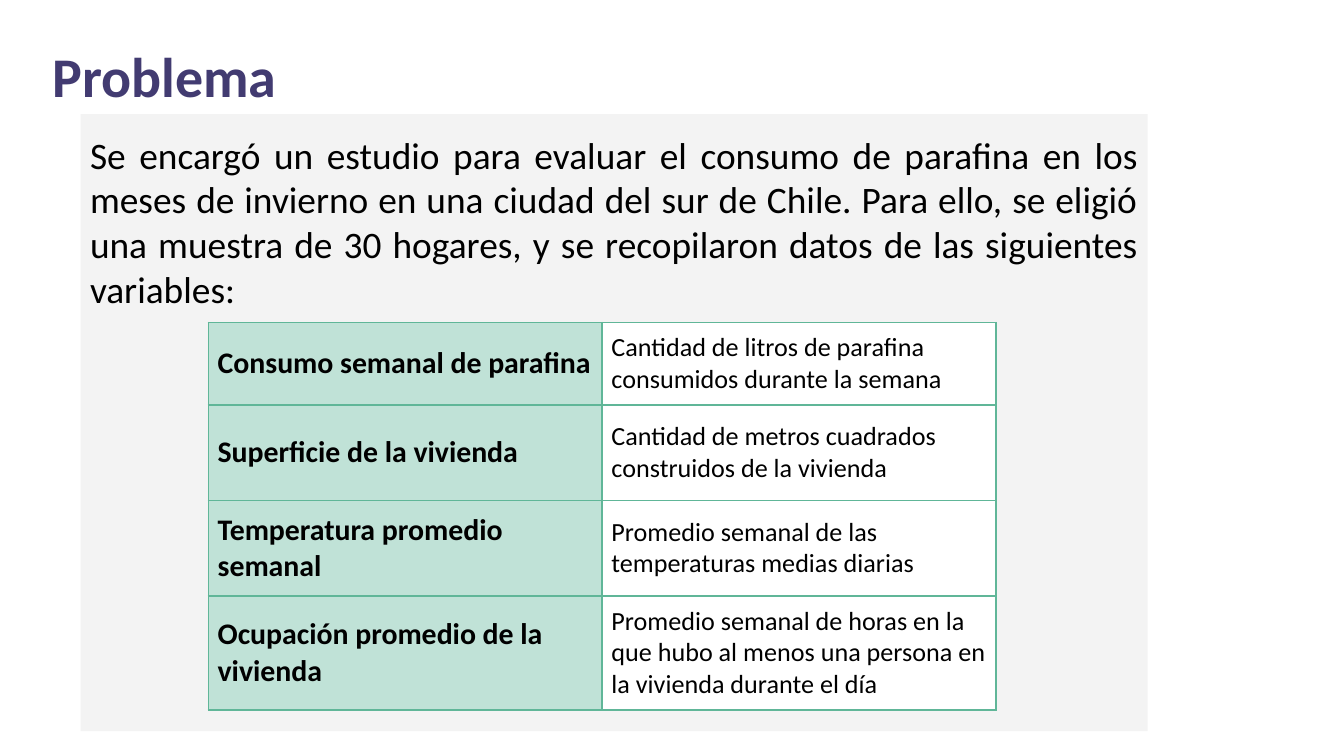
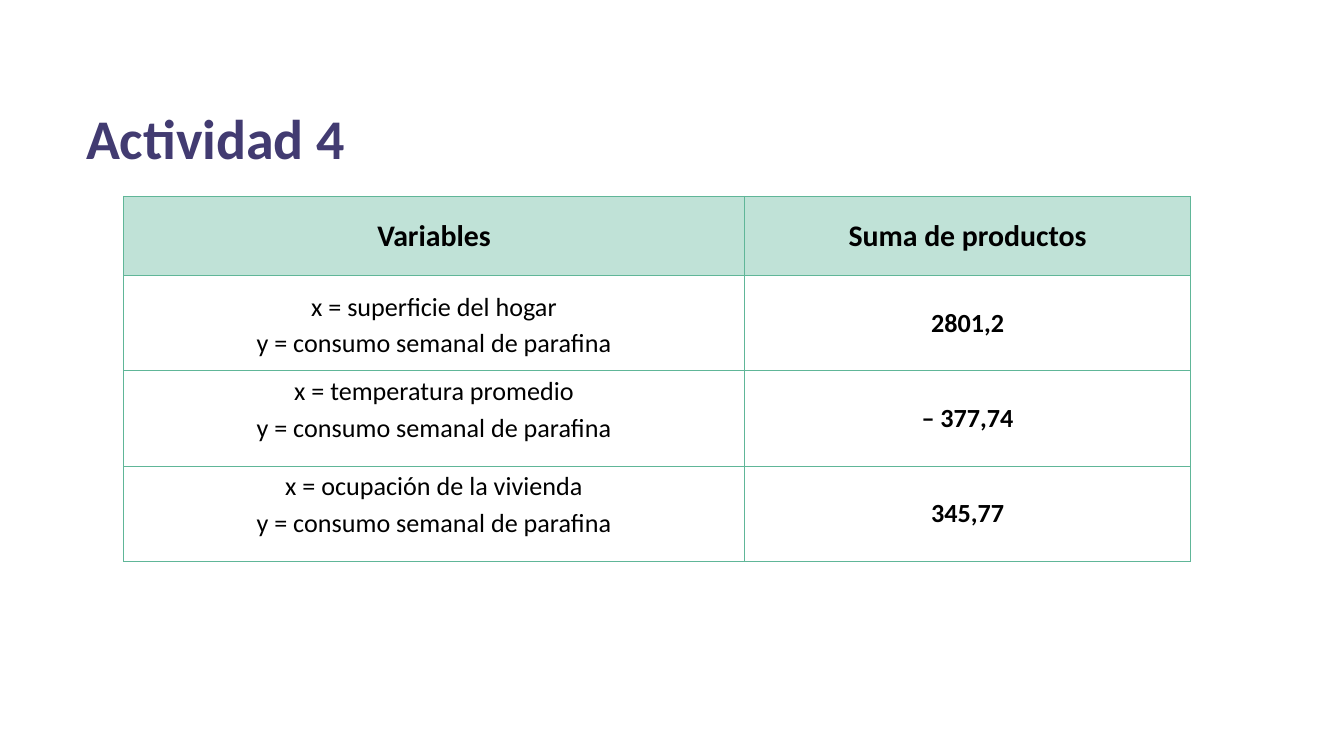
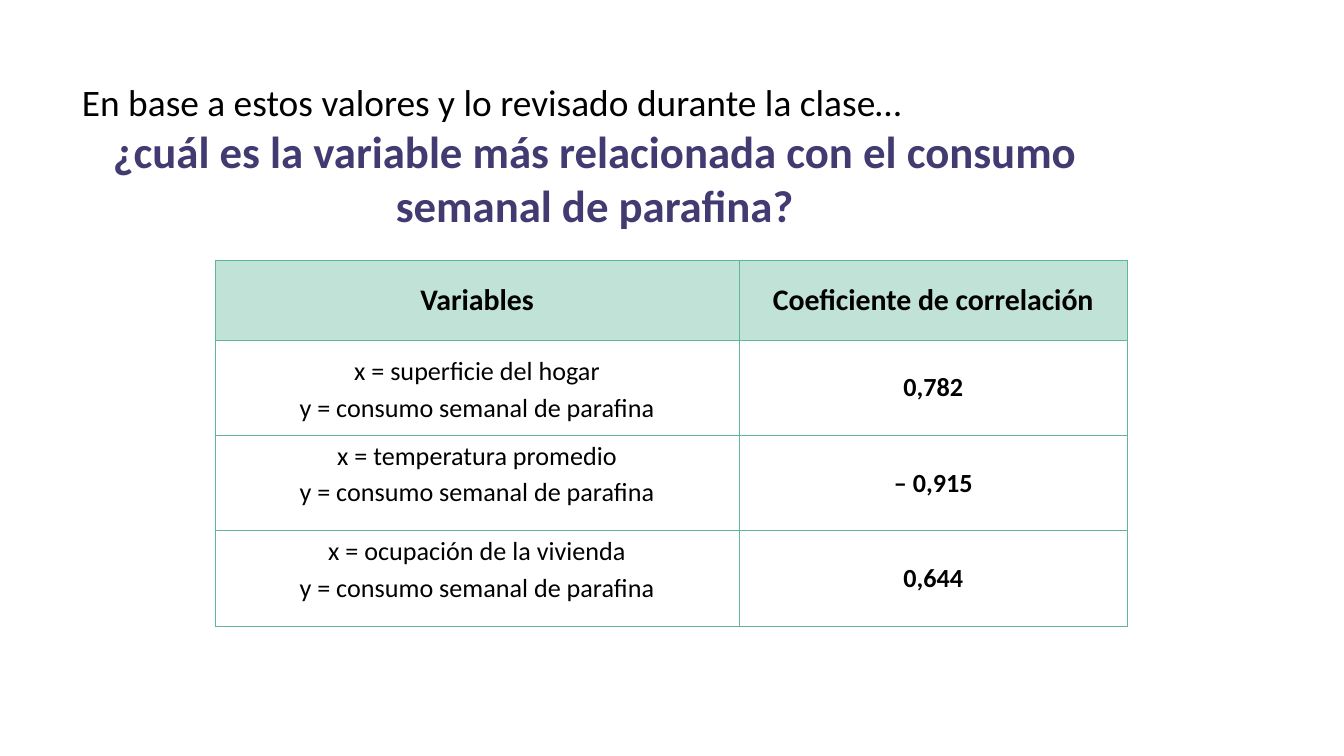
import pptx
import pptx.util
import pptx.dml.color
import pptx.enum.shapes
import pptx.enum.text
import pptx.oxml
import pptx.oxml.ns

Inches = pptx.util.Inches
Pt = pptx.util.Pt
ALIGN = pptx.enum.text.PP_ALIGN
ANCHOR = pptx.enum.text.MSO_ANCHOR

# Shared look
WIDTH = 10
HEIGHT = WIDTH * 9 / 16
COLORS = {"title": "423B71", "text": "000000", "panel": "F3F3F3",
          "head": "C0E2D7", "cell": "FFFFFF", "border": "60B698"}
FONT = "Calibri"
TITLE = {"size": 30, "bold": True, "color": "title"}
QUERY = {"size": 24, "bold": True, "color": "title", "align": ALIGN.CENTER}
LEAD = {"size": 20}
BODY = {"size": 20, "align": ALIGN.JUSTIFY}
TERM = {"size": 16, "bold": True}
NOTE = {"size": 14}
HEAD = {"size": 16, "bold": True, "align": ALIGN.CENTER}
PAIR = {"size": 14, "align": ALIGN.CENTER, "spacing": 1.15}
VALUE = {"size": 14, "bold": True, "align": ALIGN.CENTER}
ROWS = [0.59, 0.71, 0.71, 0.71]

# Wording
TERMS = [
    ("Consumo semanal de parafina",
     "Cantidad de litros de parafina consumidos durante la semana"),
    ("Superficie de la vivienda",
     "Cantidad de metros cuadrados construidos de la vivienda"),
    ("Temperatura promedio semanal",
     "Promedio semanal de las temperaturas medias diarias"),
    ("Ocupación promedio de la vivienda",
     "Promedio semanal de horas en la que hubo al menos una persona "
     "en la vivienda durante el día"),
]
FACTORS = ["superficie del hogar", "temperatura promedio",
           "ocupación de la vivienda"]
PROBLEM = ("Se encargó un estudio para evaluar el consumo de parafina en los "
           "meses de invierno en una ciudad del sur de Chile. Para ello, se "
           "eligió una muestra de 30 hogares, y se recopilaron datos de las "
           "siguientes variables:")


def rgb(name):
    return pptx.dml.color.RGBColor.from_string(COLORS[name])


def write(frame, parts):
    """Fill a text frame with (text, format) paragraphs."""
    for i, (text, style) in enumerate(parts):
        para = frame.paragraphs[0] if i == 0 else frame.add_paragraph()
        para.text = text
        layout = {"alignment": style.get("align", ALIGN.LEFT),
                  "line_spacing": style.get("spacing", 1.0),
                  "space_before": Pt(0), "space_after": Pt(0)}
        for key, value in layout.items():
            setattr(para, key, value)
        font = para.runs[0].font
        look = {"name": FONT, "size": Pt(style["size"]),
                "bold": style.get("bold", False)}
        for key, value in look.items():
            setattr(font, key, value)
        font.color.rgb = rgb(style.get("color", "text"))


def inset(target, side, top):
    """Set the margins of a text frame or a cell."""
    for key, size in (("left", side), ("right", side),
                      ("top", top), ("bottom", top)):
        setattr(target, "margin_" + key, Inches(size))


def place_title(slide, box, parts, side=0.07, top=0.04):
    title = slide.shapes.title
    for key, size in zip(("left", "top", "width", "height"), box):
        setattr(title, key, Inches(size))
    frame = title.text_frame
    frame.word_wrap = True
    frame.auto_size = pptx.enum.text.MSO_AUTO_SIZE.NONE
    frame.vertical_anchor = ANCHOR.TOP
    inset(frame, side, top)
    write(frame, parts)


def add_panel(slide, box, parts):
    panel = slide.shapes.add_shape(
        pptx.enum.shapes.MSO_SHAPE.RECTANGLE, *map(Inches, box))
    panel.shadow.inherit = False
    panel.fill.solid()
    panel.fill.fore_color.rgb = rgb("panel")
    panel.line.fill.background()
    frame = panel.text_frame
    frame.word_wrap = True
    frame.vertical_anchor = ANCHOR.TOP
    inset(frame, 0.07, 0.13)
    write(frame, parts)


def add_border(cell, width):
    props = cell._tc.get_or_add_tcPr()
    for side in ("lnL", "lnR", "lnT", "lnB"):
        props.append(pptx.oxml.parse_xml(
            f'<a:{side} {pptx.oxml.ns.nsdecls("a")} w="{Pt(width)}">'
            f'<a:solidFill><a:srgbClr val="{COLORS["border"]}"/></a:solidFill>'
            f'</a:{side}>'))


def fill_cell(cell, parts, fill, width, top, anchor=ANCHOR.MIDDLE):
    add_border(cell, width)
    if fill:
        cell.fill.solid()
        cell.fill.fore_color.rgb = rgb(fill)
    else:
        cell.fill.background()
    cell.vertical_anchor = anchor
    inset(cell, 0.07, top)
    write(cell.text_frame, parts)


def add_grid(slide, left, top, cols):
    box = map(Inches, (left, top, sum(cols), sum(ROWS)))
    grid = slide.shapes.add_table(len(ROWS), len(cols), *box).table
    grid.first_row = grid.horz_banding = False
    for col, width in zip(grid.columns, cols):
        col.width = Inches(width)
    for row, height in zip(grid.rows, ROWS):
        row.height = Inches(height)
    return grid


def add_terms(slide, left, top, cols):
    """Table of terms and their meaning."""
    grid = add_grid(slide, left, top, cols)
    for r, (term, note) in enumerate(TERMS):
        fill_cell(grid.cell(r, 0), [(term, TERM)], "head", 1, 0.07)
        fill_cell(grid.cell(r, 1), [(note, NOTE)], "cell", 1, 0.07)


def add_pairs(slide, left, top, cols, label, values):
    """Table of variable pairs with one value each."""
    grid = add_grid(slide, left, top, cols)
    for c, text in enumerate(("Variables", label)):
        fill_cell(grid.cell(0, c), [(text, HEAD)], "head", 0.5, 0)
    for r, (factor, value) in enumerate(zip(FACTORS, values), 1):
        pair = [(f"x = {factor}", PAIR),
                ("y = consumo semanal de parafina", PAIR)]
        anchor = ANCHOR.MIDDLE if r == 1 else ANCHOR.TOP
        fill_cell(grid.cell(r, 0), pair, None, 0.5, 0, anchor)
        fill_cell(grid.cell(r, 1), [(value, VALUE)], None, 0.5, 0)


def main():
    deck = pptx.Presentation()
    deck.slide_width, deck.slide_height = Inches(WIDTH), Inches(HEIGHT)
    first, second, third = (
        deck.slides.add_slide(deck.slide_layouts[5]) for _ in range(3))

    # Problem and its variables
    place_title(first, (0.32, 0.27, 6.7, 0.58), [("Problema", TITLE)])
    add_panel(first, (0.6, 0.85, 7.94, 4.59), [(PROBLEM, BODY)])
    add_terms(first, 1.55, 2.4, (2.93, 2.93))

    # Sums of products
    place_title(second, (0.57, 0.73, 6.7, 0.58), [("Actividad 4", TITLE)])
    add_pairs(second, 0.92, 1.46, (4.62, 3.32), "Suma de productos",
              ("2801,2", "– 377,74", "345,77"))

    # Closing question
    place_title(third, (0.51, 0.49, 7.83, 1.35), [
        ("En base a estos valores y lo revisado durante la clase…", LEAD),
        ("¿cuál es la variable más relacionada con el consumo semanal "
         "de parafina?", QUERY)], 0.1, 0.1)
    add_pairs(third, 1.6, 1.94, (3.9, 2.89), "Coeficiente de correlación",
              ("0,782", "– 0,915", "0,644"))

    deck.save("out.pptx")


if __name__ == "__main__":
    main()
